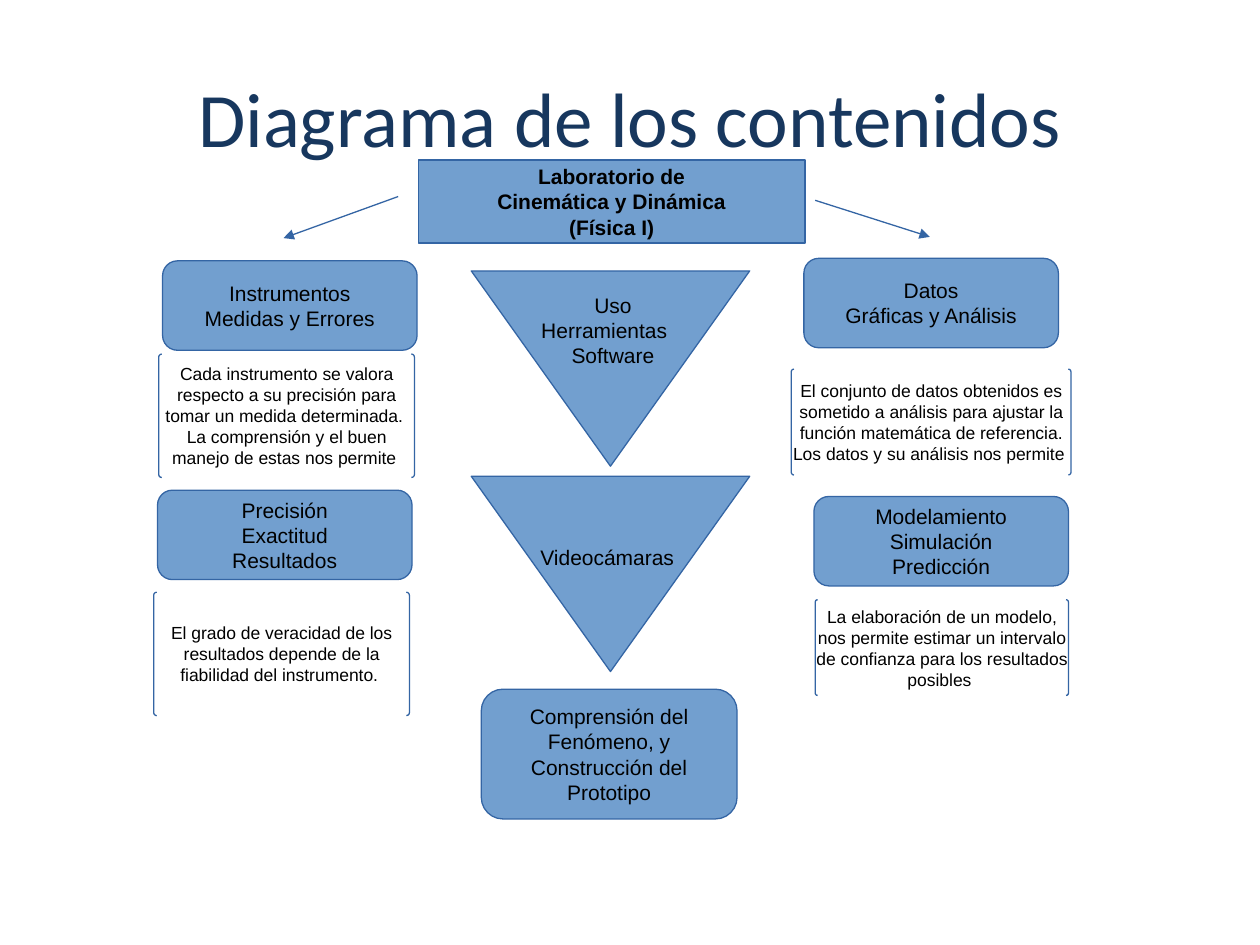
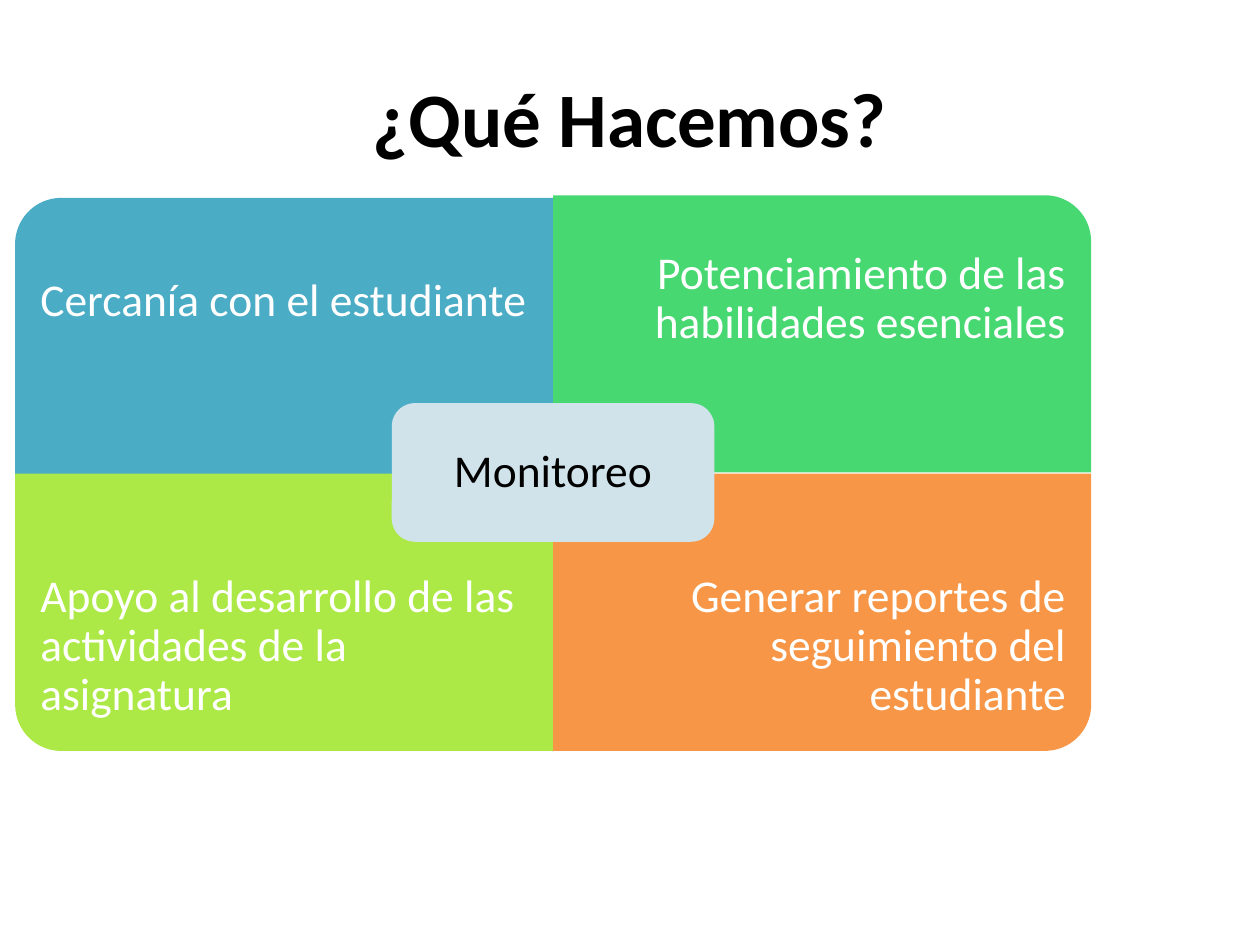
import dataclasses

import pptx
import pptx.dml.color
import pptx.enum.shapes
import pptx.enum.text
import pptx.oxml
import pptx.oxml.ns
import pptx.util
from pptx.util import Inches

SHAPES = pptx.enum.shapes.MSO_SHAPE
ALIGN = pptx.enum.text.PP_ALIGN
ANCHOR = pptx.enum.text.MSO_ANCHOR


@dataclasses.dataclass(frozen=True)
class Theme:
    heading_font: str = "Calibri"
    diagram_font: str = "Arial"
    title_size: int = 44
    quadrant_size: int = 26
    box_size: int = 12
    note_size: int = 10
    line_width: float = 0.75
    black: str = "000000"
    white: str = "FFFFFF"
    navy: str = "17375E"
    box_fill: str = "729FCF"
    box_line: str = "3465A4"
    teal: str = "4BACC6"
    green: str = "47D872"
    lime: str = "ACE946"
    orange: str = "F79646"
    pale: str = "D0E3EA"


THEME = Theme()


def rgb(value):
    return pptx.dml.color.RGBColor.from_string(value)


def write_text(shape, text, *, size, font=THEME.diagram_font, color=THEME.black, bold=False,
               align=ALIGN.CENTER, anchor=ANCHOR.MIDDLE, inset=0, line_spacing=None):
    """Fill a shape with text, one paragraph for each line."""
    frame = shape.text_frame
    frame.word_wrap = True
    frame.vertical_anchor = anchor
    frame.margin_left = frame.margin_right = Inches(inset)
    frame.margin_top = frame.margin_bottom = Inches(inset)
    frame.text = text
    for paragraph in frame.paragraphs:
        paragraph.alignment = align
        paragraph.line_spacing = line_spacing
        paragraph.font.name = font
        paragraph.font.size = pptx.util.Pt(size)
        paragraph.font.bold = bold
        paragraph.font.color.rgb = rgb(color)


def paint(shape, fill=None, line=None):
    shape.shadow.inherit = False
    if fill:
        shape.fill.solid()
        shape.fill.fore_color.rgb = rgb(fill)
    else:
        shape.fill.background()
    if line:
        shape.line.color.rgb = rgb(line)
        shape.line.width = pptx.util.Pt(THEME.line_width)
    else:
        shape.line.fill.background()


def add_shape(slide, kind, left, top, width, height, **colors):
    shape = slide.shapes.add_shape(kind, *map(Inches, (left, top, width, height)))
    paint(shape, **colors)
    return shape


def add_text(slide, text, left, top, width, height, **text_format):
    box = slide.shapes.add_textbox(*map(Inches, (left, top, width, height)))
    write_text(box, text, **text_format)
    return box


def add_title(slide, text, **text_format):
    add_text(slide, text, 0.5, 0.3, 9, 1.25, size=THEME.title_size,
             font=THEME.heading_font, **text_format)


def add_box(slide, text, left, top, width=2.02, height=0.71,
            kind=SHAPES.FLOWCHART_ALTERNATE_PROCESS, bold=False):
    box = add_shape(slide, kind, left, top, width, height,
                    fill=THEME.box_fill, line=THEME.box_line)
    write_text(box, text, size=THEME.box_size, bold=bold)


def add_bracketed_note(slide, text, left, top, width, height):
    note = add_shape(slide, SHAPES.DOUBLE_BRACKET, left, top, width, height,
                     line=THEME.box_line)
    note.adjustments[0] = 0.025
    write_text(note, text, size=THEME.note_size)


def add_funnel(slide, top, left=3.74, width=2.21, height=1.55):
    """Draw a triangle that points down."""
    builder = slide.shapes.build_freeform(Inches(left), Inches(top))
    builder.add_line_segments([
        (Inches(left + width), Inches(top)),
        (Inches(left + width / 2), Inches(top + height)),
    ], close=True)
    paint(builder.convert_to_shape(), fill=THEME.box_fill, line=THEME.box_line)


def add_arrow(slide, *ends):
    arrow = slide.shapes.add_connector(pptx.enum.shapes.MSO_CONNECTOR.STRAIGHT,
                                       *map(Inches, ends))
    arrow.line.color.rgb = rgb(THEME.box_line)
    arrow.line.width = pptx.util.Pt(THEME.line_width)
    head = pptx.oxml.parse_xml(f'<a:tailEnd {pptx.oxml.ns.nsdecls("a")} type="triangle"/>')
    arrow.line._get_or_add_ln().append(head)
    effects = pptx.oxml.parse_xml(f'<a:effectLst {pptx.oxml.ns.nsdecls("a")}/>')
    arrow._element.spPr.append(effects)


def add_quadrant(slide, text, left, top, color, rotation, align, text_top):
    """Draw a quarter whose one round corner is turned outwards."""
    width, height = 4.27, 2.2
    if rotation % 180:
        shift = (width - height) / 2
        place = (left + shift, top - shift, height, width)
    else:
        place = (left, top, width, height)
    quarter = add_shape(slide, SHAPES.ROUND_1_RECTANGLE, *place, fill=color)
    quarter.rotation = rotation
    add_text(slide, text, left, text_top, width, 1.65, size=THEME.quadrant_size,
             font=THEME.heading_font, color=THEME.white, align=align, inset=0.2,
             line_spacing=0.9)


def build_contents_slide(slide):
    add_title(slide, "Diagrama de los contenidos", color=THEME.navy)

    add_funnel(slide, 2.15)
    tools = add_text(slide, "Uso\n Herramientas\nSoftware", 4.25, 2.32, 1.23, 0.7,
                     size=THEME.box_size, anchor=ANCHOR.TOP)
    tools.text_frame.paragraphs[1].alignment = ALIGN.LEFT
    add_funnel(slide, 3.78)
    add_text(slide, "Videocámaras", 4.23, 4.32, 1.18, 0.34,
             size=THEME.box_size, anchor=ANCHOR.TOP)

    add_box(slide, "Laboratorio de\nCinemática y Dinámica\n(Física I)",
            3.32, 1.27, 3.07, 0.66, kind=SHAPES.RECTANGLE, bold=True)
    add_box(slide, "Comprensión del Fenómeno, y\nConstrucción del Prototipo",
            3.82, 5.47, 2.03, 1.03)
    topics = [
        ("Instrumentos\nMedidas y Errores", 1.29, 2.07),
        ("Precisión\nExactitud\nResultados", 1.25, 3.89),
        ("Datos\nGráficas y Análisis", 6.38, 2.05),
        ("Modelamiento\nSimulación\nPredicción", 6.46, 3.94),
    ]
    for topic in topics:
        add_box(slide, *topic)

    notes = [
        ("Cada instrumento se valora respecto a su precisión para tomar un medida "
         "determinada. \nLa comprensión y el buen manejo de estas nos permite ",
         1.26, 2.81, 2.03, 0.98),
        ("El conjunto de datos obtenidos es sometido a análisis para ajustar la función "
         "matemática de referencia.\nLos datos y su análisis nos permite ",
         6.28, 2.93, 2.22, 0.84),
        ("El grado de veracidad de los resultados depende de la fiabilidad del "
         "instrumento. ", 1.22, 4.7, 2.03, 0.98),
        ("La elaboración de un modelo, nos permite estimar un intervalo de confianza "
         "para los resultados posibles ", 6.47, 4.76, 2.01, 0.76),
    ]
    for note in notes:
        add_bracketed_note(slide, *note)

    add_arrow(slide, 3.16, 1.56, 2.25, 1.89)
    add_arrow(slide, 6.47, 1.59, 7.38, 1.88)


def build_activities_slide(slide):
    add_title(slide, "¿Qué Hacemos?", bold=True)

    left, middle = 0.12, 4.39
    upper_text, lower_text = 1.55, 4.31
    quadrants = [
        ("Cercanía con el estudiante", left, 1.57, THEME.teal, 270,
         ALIGN.LEFT, upper_text + 0.02),
        ("Potenciamiento de las habilidades esenciales", middle, 1.55, THEME.green, 0,
         ALIGN.RIGHT, upper_text),
        ("Apoyo al desarrollo de las actividades de la asignatura", left, 3.76,
         THEME.lime, 180, ALIGN.LEFT, lower_text),
        ("Generar reportes de seguimiento del estudiante", middle, 3.76,
         THEME.orange, 90, ALIGN.RIGHT, lower_text),
    ]
    for quadrant in quadrants:
        add_quadrant(slide, *quadrant)

    hub = add_shape(slide, SHAPES.ROUNDED_RECTANGLE, 3.11, 3.2, 2.56, 1.1, fill=THEME.pale)
    write_text(hub, "Monitoreo", size=THEME.quadrant_size, font=THEME.heading_font,
               inset=0.11, line_spacing=0.9)


def main():
    presentation = pptx.Presentation()
    presentation.slide_width = Inches(10)
    presentation.slide_height = Inches(7.5)
    blank = presentation.slide_layouts[6]
    for build in (build_contents_slide, build_activities_slide):
        build(presentation.slides.add_slide(blank))
    presentation.save("out.pptx")


if __name__ == "__main__":
    main()
